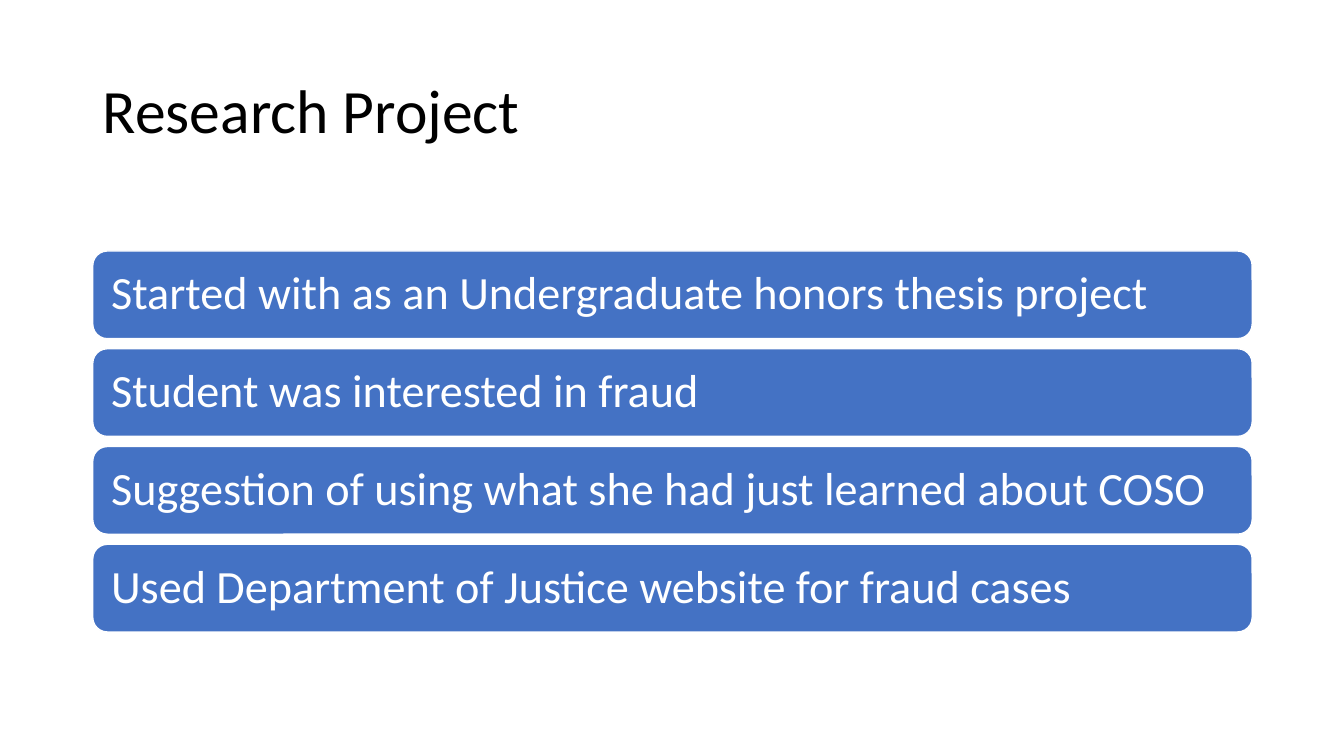
from dataclasses import dataclass

from pptx import Presentation
from pptx.dml.color import RGBColor
from pptx.enum.shapes import MSO_SHAPE
from pptx.enum.text import MSO_ANCHOR, MSO_AUTO_SIZE, PP_ALIGN
from pptx.util import Inches, Pt


@dataclass(frozen=True)
class Theme:
    font: str = "Calibri"
    title_size: Pt = Pt(44)
    bar_size: Pt = Pt(33)
    black: RGBColor = RGBColor(0x00, 0x00, 0x00)
    white: RGBColor = RGBColor(0xFF, 0xFF, 0xFF)
    blue: RGBColor = RGBColor(0x44, 0x72, 0xC4)


theme = Theme()


def format_text(text_frame, size, color):
    text_frame.word_wrap = True
    text_frame.auto_size = MSO_AUTO_SIZE.NONE
    text_frame.vertical_anchor = MSO_ANCHOR.MIDDLE
    paragraph = text_frame.paragraphs[0]
    paragraph.alignment = PP_ALIGN.LEFT
    paragraph.line_spacing = 0.9
    paragraph.font.name = theme.font
    paragraph.font.size = size
    paragraph.font.color.rgb = color


LEFT, WIDTH = 0.92, 11.5
BAR_TOP, BAR_HEIGHT, BAR_PITCH = 2.49, 0.87, 0.97
BAR_INSET = 0.18
BAR_TEXTS = [
    "Started with as an Undergraduate honors thesis project",
    "Student was interested in fraud",
    "Suggestion of using what she had just learned about COSO",
    "Used Department of Justice website for fraud cases",
]

presentation = Presentation()
presentation.slide_width = Inches(13.33)
presentation.slide_height = Inches(7.5)
title_only_layout = presentation.slide_layouts[5]
slide = presentation.slides.add_slide(title_only_layout)

title = slide.shapes.title
title.left, title.top = Inches(LEFT), Inches(0.4)
title.width, title.height = Inches(WIDTH), Inches(1.45)
title.text_frame.text = "Research Project"
format_text(title.text_frame, theme.title_size, theme.black)

for index, text in enumerate(BAR_TEXTS):
    bar = slide.shapes.add_shape(
        MSO_SHAPE.ROUNDED_RECTANGLE,
        Inches(LEFT), Inches(BAR_TOP + index * BAR_PITCH),
        Inches(WIDTH), Inches(BAR_HEIGHT),
    )
    bar.shadow.inherit = False
    bar.fill.solid()
    bar.fill.fore_color.rgb = theme.blue
    bar.line.color.rgb = theme.white
    bar.line.width = Pt(1)

    text_frame = bar.text_frame
    text_frame.text = text
    # The rounded corners already inset the text area by about 0.04 inches.
    text_frame.margin_left = text_frame.margin_right = Inches(BAR_INSET - 0.04)
    text_frame.margin_top = text_frame.margin_bottom = Inches(0.14)
    format_text(text_frame, theme.bar_size, theme.white)

presentation.save("out.pptx")
